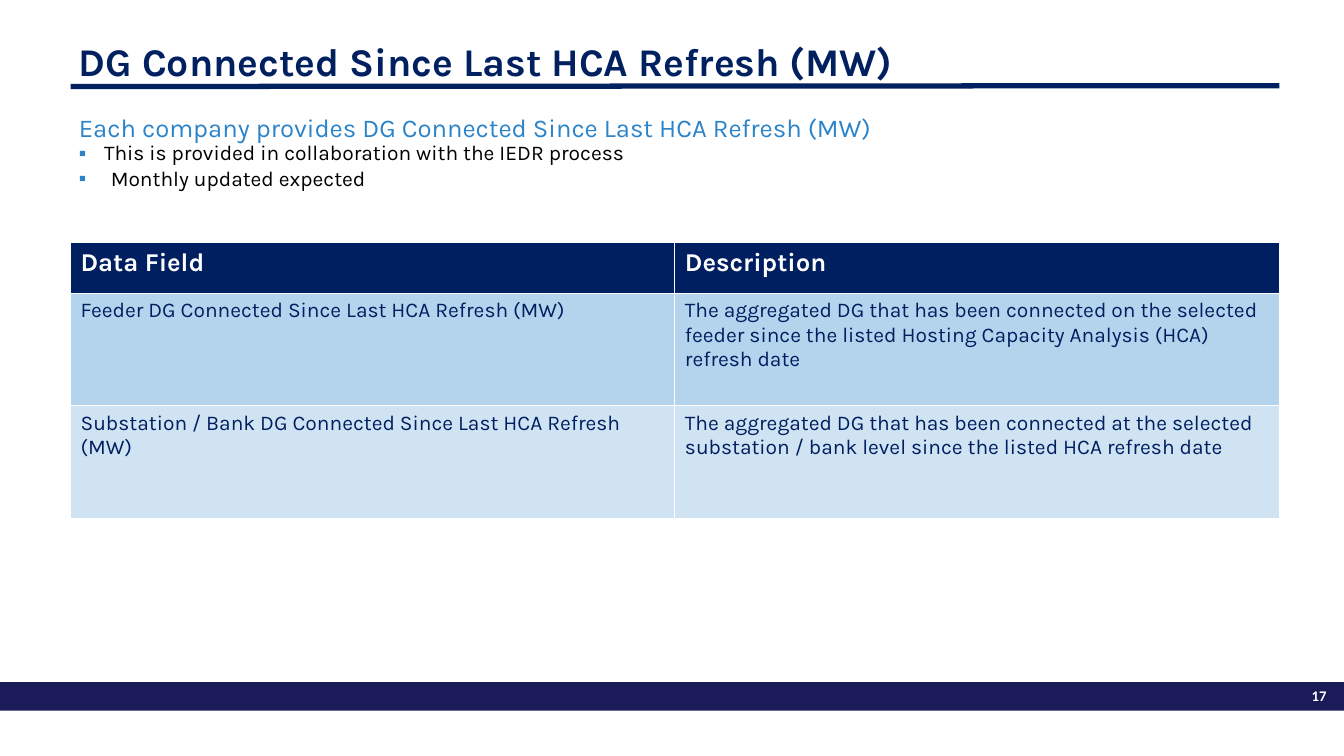
from dataclasses import dataclass

from lxml.etree import SubElement
from pptx import Presentation
from pptx.dml.color import RGBColor
from pptx.enum.shapes import MSO_CONNECTOR as Connector, MSO_SHAPE as Shape
from pptx.enum.text import MSO_ANCHOR as Anchor, PP_ALIGN as Align
from pptx.oxml.ns import qn
from pptx.util import Inches, Pt


@dataclass(frozen=True)
class Theme:
    font: str = "Karla"
    number_font: str = "Calibri"
    navy: str = "002060"
    table_navy: str = "001F60"
    footer: str = "1B1B59"
    blue: str = "2B84C9"
    white: str = "FFFFFF"
    black: str = "000000"
    row_fills: tuple = ("001F60", "B4D4ED", "D0E3F3")
    title_size: float = 33.6
    heading_size: float = 22
    text_size: float = 18
    number_size: float = 12.6


theme = Theme()
LEFT, CONTENT_WIDTH = 0.84, 14.39
RIGHT = LEFT + CONTENT_WIDTH


def style(para, size, color, bold=False, font=theme.font):
    for span in para.runs:
        span.font.name, span.font.size, span.font.bold = font, Pt(size), bold
        span.font.color.rgb = RGBColor.from_string(color)


def add_text(page, left, top, width, height, lines):
    box = page.shapes.add_textbox(*map(Inches, (left, top, width, height)))
    box.text_frame.word_wrap = True
    box.text_frame.text = "\n".join(lines)
    return box.text_frame


deck = Presentation()
deck.slide_width, deck.slide_height = Inches(16), Inches(9)
page = deck.slides.add_slide(deck.slide_layouts[6])

# Footer band and page number
band = page.shapes.add_shape(Shape.RECTANGLE, 0, Inches(8.12), deck.slide_width, Inches(0.34))
band.shadow.inherit = False
band.fill.solid()
band.fill.fore_color.rgb = RGBColor.from_string(theme.footer)
band.line.fill.background()

number = add_text(page, RIGHT, 8.13, 0.66, 0.31, ["17"])
number.paragraphs[0].alignment = Align.RIGHT
style(number.paragraphs[0], theme.number_size, theme.white, True, theme.number_font)

# Title and its rule
rule = page.shapes.add_connector(
    Connector.STRAIGHT, Inches(LEFT), Inches(1.03), Inches(RIGHT), Inches(1.02))
rule.line.color.rgb = RGBColor.from_string(theme.navy)
rule.line.width = Pt(4.5)
SubElement(rule._element.spPr, qn("a:effectLst"))

title = add_text(page, LEFT, 0.48, 12.56, 0.57, ["DG Connected Since Last HCA Refresh (MW)"])
title.vertical_anchor = Anchor.MIDDLE
title.paragraphs[0].line_spacing = 0.9
style(title.paragraphs[0], theme.title_size, theme.navy, True)

# Introduction
intro = add_text(page, LEFT, 1.32, CONTENT_WIDTH, 1.2, [
    "Each company provides DG Connected Since Last HCA Refresh (MW)",
    "This is provided in collaboration with the IEDR process",
    "Monthly updated expected",
])
heading, *bullets = intro.paragraphs
heading.line_spacing = 0.9
style(heading, theme.heading_size, theme.blue)
for para, indent, spacing in zip(bullets, (0.3, 0.38), (0.9, 1.0)):
    para.line_spacing = spacing
    props = para._p.get_or_add_pPr()
    props.set("marL", str(Inches(indent)))
    props.set("indent", str(-Inches(indent)))
    bullet_color = SubElement(props, qn("a:buClr"))
    SubElement(bullet_color, qn("a:srgbClr"), val=theme.blue)
    SubElement(props, qn("a:buFont"), typeface="Arial")
    SubElement(props, qn("a:buChar"), char="▪")
    style(para, theme.text_size, theme.black)

# Data field table
rows = [
    ("Data Field", "Description"),
    ("Feeder DG Connected Since Last HCA Refresh (MW)",
     "The aggregated DG that has been connected on the selected feeder since "
     "the listed Hosting Capacity Analysis (HCA) refresh date"),
    ("Substation / Bank DG Connected Since Last HCA Refresh (MW)",
     "The aggregated DG that has been connected at the selected substation / "
     "bank level since the listed HCA refresh date"),
]
row_heights = (0.6, 1.34, 1.34)
table = page.shapes.add_table(
    len(rows), 2, Inches(LEFT), Inches(2.89),
    Inches(CONTENT_WIDTH), Inches(sum(row_heights))).table
for row, height, fill, texts in zip(table.rows, row_heights, theme.row_fills, rows):
    row.height = Inches(height)
    is_header = texts == rows[0]
    for cell, text in zip(row.cells, texts):
        cell.text = text
        cell.margin_left = cell.margin_right = Inches(0.12)
        cell.margin_top = cell.margin_bottom = Inches(0.06)
        style(cell.text_frame.paragraphs[0],
              theme.heading_size if is_header else theme.text_size,
              theme.white if is_header else theme.table_navy, is_header)
        props = cell._tc.get_or_add_tcPr()
        for side in ("lnL", "lnR", "lnT", "lnB"):
            border = SubElement(props, qn(f"a:{side}"), w=str(Pt(1)))
            SubElement(SubElement(border, qn("a:solidFill")), qn("a:srgbClr"), val=theme.white)
        cell.fill.solid()
        cell.fill.fore_color.rgb = RGBColor.from_string(fill)

deck.save("out.pptx")
